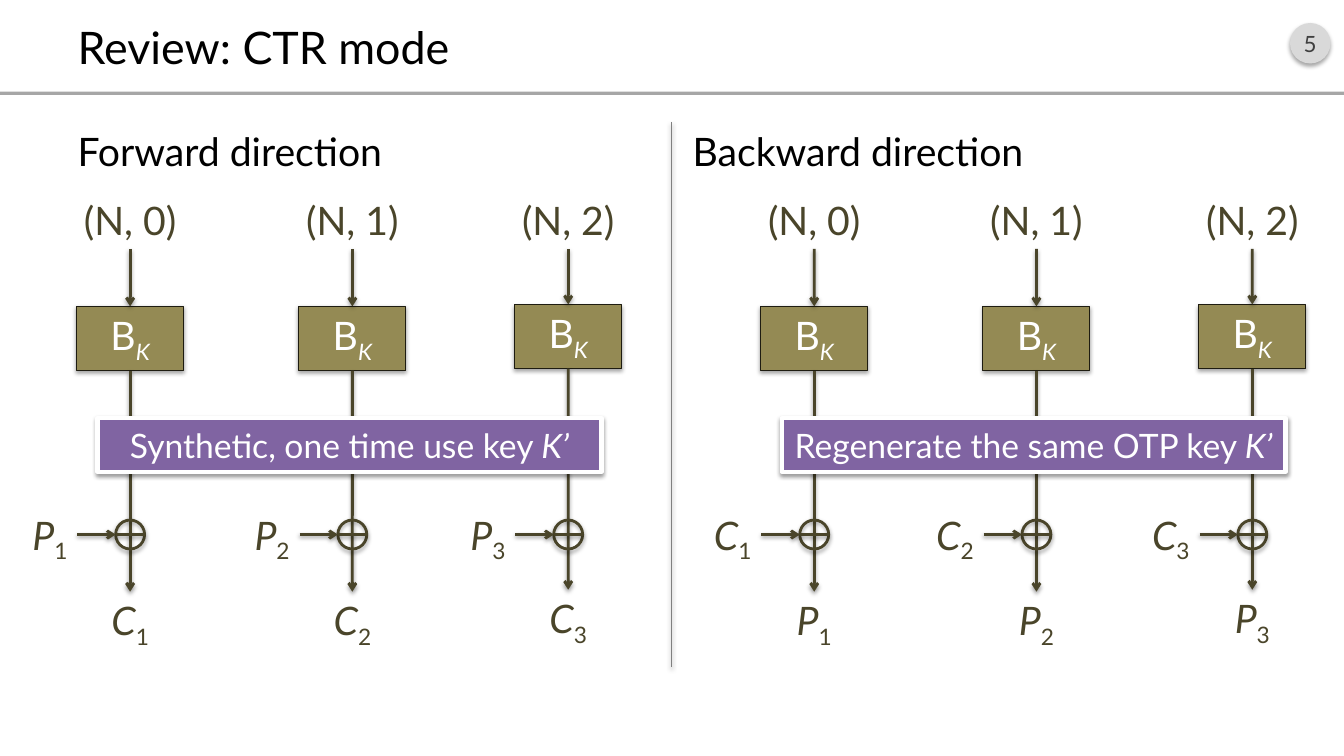
import pptx
import pptx.dml.color
import pptx.enum.shapes
import pptx.enum.text
import pptx.oxml
import pptx.oxml.ns
import pptx.util
from pptx.util import Cm

SHAPE = pptx.enum.shapes.MSO_SHAPE
ALIGN = pptx.enum.text.PP_ALIGN
ANCHOR = pptx.enum.text.MSO_ANCHOR
INK = "4A452A"
WHITE = "FFFFFF"
COLUMNS = [(3.28, 0), (8.88, 0), (14.32, 0.05)]


def color(hex_value):
    return pptx.dml.color.RGBColor.from_string(hex_value)


def add_shadow(part, alpha=35, distance=1.8):
    part._element.spPr.append(pptx.oxml.parse_xml(
        f'<a:effectLst {pptx.oxml.ns.nsdecls("a")}>'
        f'<a:outerShdw blurRad="{pptx.util.Pt(3.1)}" dist="{pptx.util.Pt(distance)}"'
        ' dir="5400000" rotWithShape="0"><a:srgbClr val="000000">'
        f'<a:alpha val="{alpha * 1000}"/></a:srgbClr></a:outerShdw></a:effectLst>'))


def write(frame, runs, size, hex_value, align=ALIGN.CENTER, anchor=ANCHOR.MIDDLE):
    frame.word_wrap = True
    frame.auto_size = pptx.enum.text.MSO_AUTO_SIZE.NONE
    frame.vertical_anchor = anchor
    paragraph = frame.paragraphs[0]
    paragraph.alignment = align
    paragraph.font.name = "Lato"
    paragraph.font.size = pptx.util.Pt(size)
    paragraph.font.bold = False
    paragraph.font.color.rgb = color(hex_value)
    for text, italic, subscript in runs:
        run = paragraph.add_run()
        run.text = text
        if italic:
            run.font.italic = True
        if subscript:
            run._r.get_or_add_rPr().set("baseline", "-25000")


def add_figure(shapes, kind, box, fill=None, line=None, width=0.75):
    figure = shapes.add_shape(kind, *map(Cm, box))
    figure.shadow.inherit = False
    if fill:
        figure.fill.solid()
        figure.fill.fore_color.rgb = color(fill)
    else:
        figure.fill.background()
    if line:
        figure.line.color.rgb = color(line)
        figure.line.width = pptx.util.Pt(width)
    else:
        figure.line.fill.background()
    return figure


def shade_figure(figure, alpha=35, distance=1.8):
    spPr = figure._element.spPr
    spPr.remove(spPr.find(pptx.oxml.ns.qn("a:effectLst")))
    add_shadow(figure, alpha, distance)


def add_line(shapes, start, end, hex_value=INK, width=2, arrow=False):
    line = shapes.add_connector(pptx.enum.shapes.MSO_CONNECTOR.STRAIGHT,
                                *map(Cm, start + end))
    line.line.color.rgb = color(hex_value)
    line.line.width = pptx.util.Pt(width)
    if arrow:
        line.line._get_or_add_ln().append(pptx.oxml.parse_xml(
            f'<a:tailEnd {pptx.oxml.ns.nsdecls("a")} type="arrow"/>'))
    add_shadow(line, 38, 1.6)
    return line


def add_label(shapes, box, runs, align=ALIGN.CENTER):
    label = shapes.add_textbox(*map(Cm, box))
    write(label.text_frame, runs, 28, INK, align, ANCHOR.TOP)
    return label


def add_block(shapes, center, top, lift, index, source, result):
    cipher_top = top + 2.89 - lift
    cipher_bottom = cipher_top + 1.62
    result_top = top + 10.08 - lift
    xor_y, radius = top + 8.64, 0.365

    nonce = add_label(shapes, (center - 1.95, top, 3.9, 1.44),
                      [(f"(N, {index})", False, False)])
    cipher = add_figure(shapes, SHAPE.RECTANGLE, (center - 1.35, cipher_top, 2.7, 1.62),
                        "948A54", "1E1C11")
    shade_figure(cipher)
    write(cipher.text_frame, [("B", False, False), ("K", True, True)], 28, WHITE)
    output = add_label(shapes, (center - 2.05, result_top, 4.1, 1.44),
                       [(result, True, False), (str(index + 1), False, True)])
    feed = add_line(shapes, (center, top + 1.44), (center, cipher_top), arrow=True)
    feed.begin_connect(nonce, 2)
    feed.end_connect(cipher, 0)
    stream = add_line(shapes, (center, cipher_bottom), (center, result_top), arrow=True)
    stream.begin_connect(cipher, 2)
    stream.end_connect(output, 0)

    xor = add_figure(shapes, SHAPE.OVAL,
                     (center - radius, xor_y - radius, 2 * radius, 2 * radius),
                     line=INK, width=2)
    shade_figure(xor)
    add_line(shapes, (center - radius, xor_y), (center + radius, xor_y))
    message = add_label(shapes, (center - 3.29, xor_y - 0.72, 1.96, 1.44),
                        [(source, True, False), (str(index + 1), False, True)],
                        ALIGN.RIGHT)
    entry = add_line(shapes, (center - 1.33, xor_y), (center - radius, xor_y), arrow=True)
    entry.begin_connect(message, 3)


def add_direction(slide, left, top, source, result, key_note):
    shapes = slide.shapes.add_group_shape().shapes
    for index, (offset, lift) in enumerate(COLUMNS):
        add_block(shapes, left + offset, top, lift, index, source, result)
    banner = add_figure(shapes, SHAPE.RECTANGLE, (left + 2.46, top + 5.71, 12.7, 1.35),
                        "8064A2", WHITE, 3)
    shade_figure(banner, 38, 1.6)
    banner.text_frame.margin_left = banner.text_frame.margin_right = 0
    write(banner.text_frame, [(key_note, False, False), ("K’", True, False)], 24, WHITE)


def fill_placeholder(placeholder, box, text, size, anchor):
    placeholder.left, placeholder.top, placeholder.width, placeholder.height = map(Cm, box)
    write(placeholder.text_frame, [(text, False, False)], size, "000000",
          ALIGN.LEFT, anchor)


def add_header(slide, width):
    page = add_figure(slide.shapes, SHAPE.OVAL, (32.51, 0.58, 1.02, 1.02), "D9D9D9")
    shade_figure(page)
    page.text_frame.margin_left = page.text_frame.margin_right = 0
    write(page.text_frame, [("5", False, False)], 16, "404040")
    add_figure(slide.shapes, SHAPE.RECTANGLE, (0, 2.31, width, 0.08), "A6A6A6")
    fill_placeholder(slide.shapes.title, (1.7, 0.41, 30.48, 1.52),
                     "Review: CTR mode", 32, ANCHOR.MIDDLE)


def add_heading(placeholder, left, text):
    fill_placeholder(placeholder, (left, 3.07, 14.96, 1.78), text, 28, ANCHOR.TOP)
    placeholder.text_frame.paragraphs[0].space_before = pptx.util.Pt(8)


def main():
    presentation = pptx.Presentation()
    presentation.slide_width, presentation.slide_height = Cm(33.87), Cm(19.05)
    slide = presentation.slides.add_slide(presentation.slide_layouts[4])
    places = {place.placeholder_format.idx: place for place in slide.placeholders}
    for idx in (2, 4):
        places[idx]._element.getparent().remove(places[idx]._element)

    add_header(slide, 33.87)
    add_heading(places[1], 1.7, "Forward direction")
    add_heading(places[3], 17.2, "Backward direction")
    add_direction(slide, 0, 4.83, "P", "C", "Synthetic, one time use key ")
    add_line(slide.shapes, (16.93, 3.07), (16.93, 16.81), "808080", 0.75)
    add_direction(slide, 17.24, 4.83, "C", "P", "Regenerate the same OTP key ")
    presentation.save("out.pptx")


if __name__ == "__main__":
    main()
